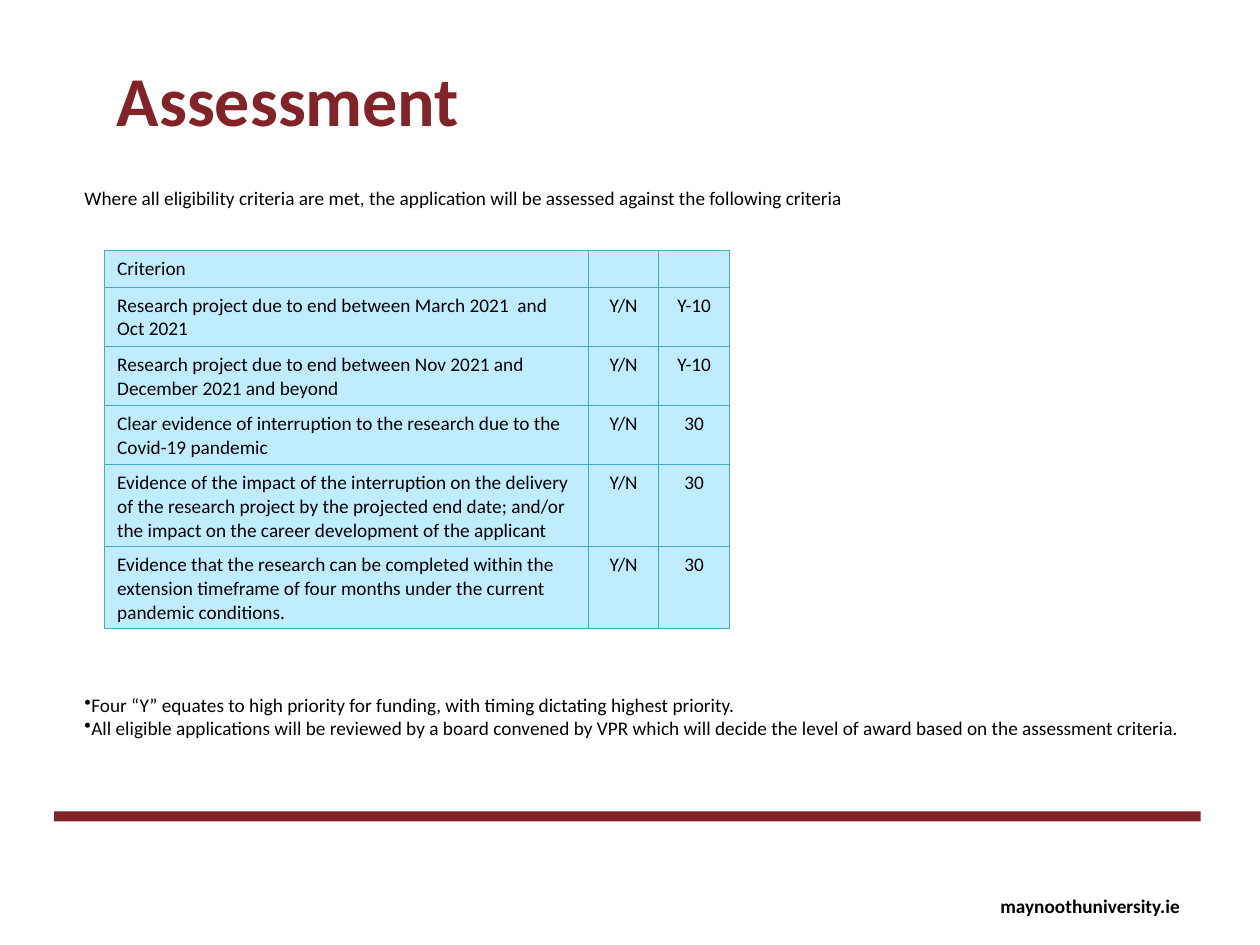
from lxml import etree
from pptx import Presentation
from pptx import util as u
from pptx.dml.color import RGBColor
from pptx.enum import shapes, text
from pptx.oxml import ns

COLORS = {
    "maroon": "822327",
    "black": "000000",
    "white": "FFFFFF",
    "cell": "BFECFF",
    "border": "46AAC5",
}
FONT = "Calibri"
BODY_SIZE = 11

TITLE = "Assessment"
INTRO = (
    "Where all eligibility criteria are met, the application will be "
    "assessed against the following criteria"
)
NOTES = [
    "Four “Y” equates to high priority for funding, with timing dictating highest priority.",
    "All eligible applications will be reviewed by a board convened by VPR which will "
    "decide the level of award based on the assessment criteria.",
]
COLUMN_WIDTHS = [3.84, 0.56, 0.56]
ROW_HEIGHTS = [0.29, 0.47, 0.47, 0.47, 0.65, 0.65]
CRITERIA = [
    ("Criterion", "", ""),
    ("Research project due to end between March 2021  and Oct 2021", "Y/N", "Y-10"),
    ("Research project due to end between Nov 2021 and December 2021 and beyond", "Y/N", "Y-10"),
    ("Clear evidence of interruption to the research due to the Covid-19 pandemic", "Y/N", "30"),
    (
        "Evidence of the impact of the interruption on the delivery of the research project "
        "by the projected end date; and/or the impact on the career development of the applicant",
        "Y/N",
        "30",
    ),
    (
        "Evidence that the research can be completed within the extension timeframe "
        "of four months under the current pandemic conditions.",
        "Y/N",
        "30",
    ),
]


def color(name):
    return RGBColor.from_string(COLORS[name])


def inches(box):
    return [u.Inches(length) for length in box]


def style(para, size=BODY_SIZE, tint="black", bold=False, align=text.PP_ALIGN.LEFT):
    para.alignment = align
    para.font.name = FONT
    para.font.size = u.Pt(size)
    para.font.bold = bold
    para.font.color.rgb = color(tint)


def add_panel(page, box, fill):
    panel = page.shapes.add_shape(shapes.MSO_SHAPE.RECTANGLE, *inches(box))
    panel.shadow.inherit = False
    panel.fill.solid()
    panel.fill.fore_color.rgb = color(fill)
    panel.line.fill.background()
    return panel


def add_title(page, box):
    title = page.shapes.add_textbox(*inches(box))
    frame = title.text_frame
    frame.word_wrap = True
    frame.margin_top = u.Inches(0.09)
    frame.text = TITLE
    style(frame.paragraphs[0], 40, "maroon", True)


def add_body(page, box):
    frame = add_panel(page, box, "white").text_frame
    frame.word_wrap = True
    frame.vertical_anchor = text.MSO_ANCHOR.TOP
    frame.margin_left = frame.margin_right = frame.margin_bottom = 0
    frame.margin_top = u.Inches(0.12)
    frame.text = INTRO
    style(frame.paragraphs[0])
    for index, note in enumerate(NOTES):
        para = frame.add_paragraph()
        para.text = note
        properties = para._p.get_or_add_pPr()
        etree.SubElement(properties, ns.qn("a:buChar"), char="•")
        style(para)
        if index == 0:
            para.space_before = u.Inches(3.84)


def add_borders(cell):
    properties = cell._tc.get_or_add_tcPr()
    for index, side in enumerate(("lnL", "lnR", "lnT", "lnB")):
        line = etree.Element(ns.qn(f"a:{side}"), w=str(u.Pt(0.75)))
        fill = etree.SubElement(line, ns.qn("a:solidFill"))
        etree.SubElement(fill, ns.qn("a:srgbClr"), val=COLORS["border"])
        properties.insert(index, line)


def add_criteria(page, box):
    frame = page.shapes.add_table(len(CRITERIA), len(COLUMN_WIDTHS), *inches(box))
    table = frame.table
    table.first_row = False
    table.horz_banding = False
    for column, width in zip(table.columns, COLUMN_WIDTHS):
        column.width = u.Inches(width)
    for row, height, entries in zip(table.rows, ROW_HEIGHTS, CRITERIA):
        row.height = u.Inches(height)
        for index, (cell, entry) in enumerate(zip(row.cells, entries)):
            cell.text = entry
            cell.fill.solid()
            cell.fill.fore_color.rgb = color("cell")
            align = text.PP_ALIGN.CENTER if index else text.PP_ALIGN.LEFT
            style(cell.text_frame.paragraphs[0], align=align)
            add_borders(cell)


def add_footer(page, box):
    footer = page.shapes.add_textbox(*inches(box))
    frame = footer.text_frame
    frame.word_wrap = False
    frame.text = "maynoothuniversity.ie"
    style(frame.paragraphs[0], bold=True)


def main():
    deck = Presentation()
    deck.slide_width = u.Inches(10)
    deck.slide_height = u.Inches(7.5)
    page = deck.slides.add_slide(deck.slide_layouts[6])
    add_panel(page, (0.43, 6.44, 9.1, 0.08), "maroon")
    add_footer(page, (7.84, 7.05, 1.65, 0.29))
    add_title(page, (0.83, 0.36, 8.27, 1.1))
    add_body(page, (0.67, 1.36, 8.81, 4.91))
    add_criteria(page, (0.83, 1.99, sum(COLUMN_WIDTHS), sum(ROW_HEIGHTS)))
    deck.save("out.pptx")


if __name__ == "__main__":
    main()
